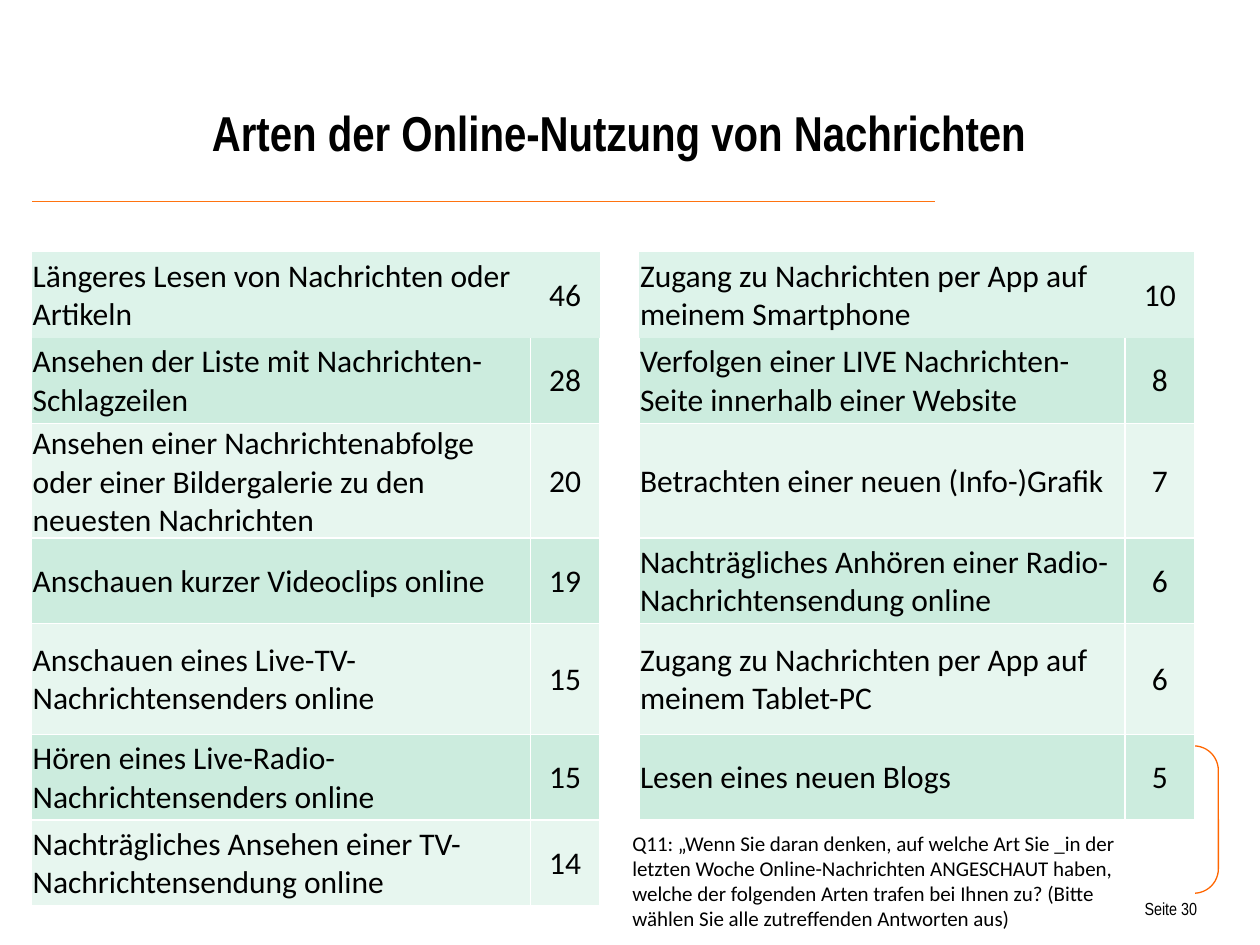
import lxml.etree
import pptx
import pptx.dml.color
import pptx.enum.shapes
import pptx.enum.text
import pptx.oxml.ns
import pptx.util

Inches = pptx.util.Inches
Pt = pptx.util.Pt
RGBColor = pptx.dml.color.RGBColor
Align = pptx.enum.text.PP_ALIGN
Anchor = pptx.enum.text.MSO_ANCHOR
ShapeType = pptx.enum.shapes.MSO_SHAPE
qn = pptx.oxml.ns.qn

BLACK = RGBColor(0x00, 0x00, 0x00)
WHITE = RGBColor(0xFF, 0xFF, 0xFF)
FRAME_ORANGE = RGBColor(0xFF, 0x66, 0x00)
RULE_ORANGE = RGBColor(0xFF, 0x73, 0x10)
TOP_GREEN = RGBColor(0xDD, 0xF3, 0xEA)
DARK_GREEN = RGBColor(0xCC, 0xEC, 0xDE)
LIGHT_GREEN = RGBColor(0xE7, 0xF6, 0xEF)

HEADING_FONT = "Arial Narrow"
BODY_FONT = "Calibri"
PLAIN_TABLE_STYLE = "{2D5ABB26-0587-4C30-8999-92F81FD0307C}"

COLUMN_WIDTHS = (3.96, 0.55, 0.31, 3.86, 0.55)
ROW_HEIGHTS = (0.68, 0.68, 0.68, 0.68, 0.88, 0.68, 0.68)
ROWS = (
    ("Längeres Lesen von Nachrichten oder Artikeln", "46", "",
     "Zugang zu Nachrichten per App auf meinem Smartphone", "10"),
    ("Ansehen der Liste mit Nachrichten-Schlagzeilen", "28", "",
     "Verfolgen einer LIVE Nachrichten-Seite innerhalb einer Website", "8"),
    ("Ansehen einer Nachrichtenabfolge oder einer Bildergalerie zu den neuesten Nachrichten",
     "20", "", "Betrachten einer neuen (Info-)Grafik", "7"),
    ("Anschauen kurzer Videoclips online", "19", "",
     "Nachträgliches Anhören einer Radio-Nachrichtensendung online", "6"),
    ("Anschauen eines Live-TV-Nachrichtensenders online", "15", "",
     "Zugang zu Nachrichten per App auf meinem Tablet-PC", "6"),
    ("Hören eines Live-Radio-Nachrichtensenders online", "15", "",
     "Lesen eines neuen Blogs", "5"),
    ("Nachträgliches Ansehen einer TV-Nachrichtensendung online", "14", "", "", ""),
)
QUESTION = (
    "Q11: „Wenn Sie daran denken, auf welche Art Sie _in der letzten Woche "
    "Online-Nachrichten ANGESCHAUT haben, welche der folgenden Arten trafen "
    "bei Ihnen zu? (Bitte wählen Sie alle zutreffenden Antworten aus)"
)


def set_font(paragraph, name, size, bold=False):
    paragraph.font.name = name
    paragraph.font.size = Pt(size)
    paragraph.font.bold = bold
    paragraph.font.color.rgb = BLACK


def add_text(slide, box, text, font_name, size, align=Align.LEFT, bold=False,
             anchor=Anchor.TOP, left_inset=0.1, right_inset=0.1):
    shape = slide.shapes.add_textbox(*map(Inches, box))
    frame = shape.text_frame
    frame.word_wrap = True
    frame.vertical_anchor = anchor
    frame.margin_left = Inches(left_inset)
    frame.margin_right = Inches(right_inset)
    paragraph = frame.paragraphs[0]
    paragraph.text = text
    paragraph.alignment = align
    set_font(paragraph, font_name, size, bold)


def add_corner_frame(slide):
    """Draw the rounded outline and the white block hiding its left side."""
    outline = slide.shapes.add_shape(
        ShapeType.ROUNDED_RECTANGLE, Inches(7), Inches(5.92), Inches(2.67), Inches(1.17))
    outline.shadow.inherit = False
    outline.fill.background()
    outline.line.color.rgb = FRAME_ORANGE
    outline.line.width = Pt(0.75)
    cover = slide.shapes.add_shape(
        ShapeType.RECTANGLE, Inches(6.92), Inches(5.75), Inches(0.33), Inches(1.33))
    cover.shadow.inherit = False
    cover.fill.solid()
    cover.fill.fore_color.rgb = WHITE
    cover.line.fill.background()


def add_title_rule(slide):
    rule = slide.shapes.add_connector(
        pptx.enum.shapes.MSO_CONNECTOR.STRAIGHT,
        Inches(7.42), Inches(1.6), Inches(0.25), Inches(1.6))
    rule.line.color.rgb = RULE_ORANGE
    rule.line.width = Pt(1)
    lxml.etree.SubElement(rule._element.spPr, qn("a:effectLst"))


def set_borders(cell, sides):
    """Give the cell white 1 pt borders on the sides, in the order L, R, T, B."""
    properties = cell._tc.get_or_add_tcPr()
    for index, side in enumerate(sides):
        line = lxml.etree.Element(qn(f"a:ln{side}"), w=str(Pt(1)))
        fill = lxml.etree.SubElement(line, qn("a:solidFill"))
        lxml.etree.SubElement(fill, qn("a:srgbClr"), val=str(WHITE))
        properties.insert(index, line)


def fill_cell(cell, text, color, align):
    cell.fill.solid()
    cell.fill.fore_color.rgb = color
    cell.vertical_anchor = Anchor.MIDDLE
    cell.margin_left = cell.margin_right = cell.margin_top = Inches(0.01)
    cell.margin_bottom = 0
    paragraph = cell.text_frame.paragraphs[0]
    paragraph.text = text
    paragraph.alignment = align
    set_font(paragraph, BODY_FONT, 18)


def row_color(row_index):
    if row_index == 0:
        return TOP_GREEN
    return DARK_GREEN if row_index % 2 else LIGHT_GREEN


def row_borders(row_index):
    """The top row has no borders, so the second has none above it."""
    return {0: "", 1: "LRB"}.get(row_index, "LRTB")


def add_usage_table(slide):
    frame = slide.shapes.add_table(
        len(ROWS), len(COLUMN_WIDTHS), Inches(0.25), Inches(2),
        Inches(sum(COLUMN_WIDTHS)), Inches(sum(ROW_HEIGHTS)))
    table = frame.table
    table.first_row = False
    table.horz_banding = False
    table._tbl.tblPr.find(qn("a:tableStyleId")).text = PLAIN_TABLE_STYLE
    for column, width in zip(table.columns, COLUMN_WIDTHS):
        column.width = Inches(width)
    for row_index, texts in enumerate(ROWS):
        table.rows[row_index].height = Inches(ROW_HEIGHTS[row_index])
        for column_index, text in enumerate(texts):
            cell = table.cell(row_index, column_index)
            color = row_color(row_index) if text else WHITE
            align = Align.CENTER if column_index in (1, 4) else Align.LEFT
            fill_cell(cell, text, color, align)
            set_borders(cell, row_borders(row_index))


def main():
    presentation = pptx.Presentation()
    presentation.slide_width = Inches(10)
    presentation.slide_height = Inches(7.5)
    slide = presentation.slides.add_slide(presentation.slide_layouts[6])

    add_corner_frame(slide)
    add_title_rule(slide)
    add_text(slide, (0.25, 0.25, 9.42, 1.08), "Arten der Online-Nutzung von Nachrichten",
             HEADING_FONT, 28, Align.CENTER, bold=True, anchor=Anchor.BOTTOM, left_inset=0)
    add_usage_table(slide)
    add_text(slide, (8.67, 7.08, 0.83, 0.33), "Seite 30", HEADING_FONT, 10, Align.RIGHT,
             left_inset=0.04, right_inset=0)
    add_text(slide, (4.92, 6.54, 4.09, 0.91), QUESTION, BODY_FONT, 12)

    presentation.save("out.pptx")


if __name__ == "__main__":
    main()
